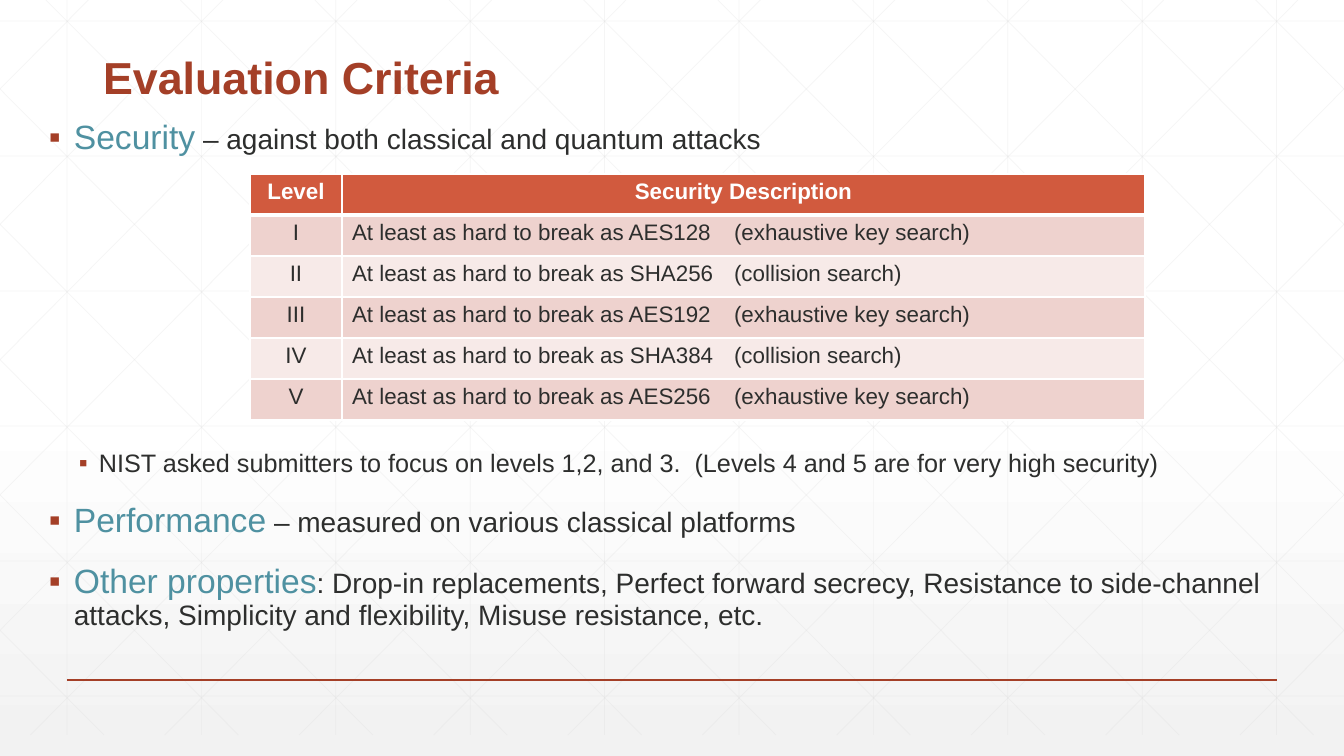
from dataclasses import dataclass

from lxml import etree
from pptx import Presentation
from pptx.dml.color import RGBColor
from pptx.enum.shapes import MSO_CONNECTOR
from pptx.enum.text import MSO_ANCHOR, MSO_AUTO_SIZE, PP_ALIGN
from pptx.oxml.ns import qn
from pptx.util import Emu, Pt

LINE = MSO_CONNECTOR.STRAIGHT
BOTTOM = MSO_ANCHOR.BOTTOM
FIXED = MSO_AUTO_SIZE.NONE
LEFT, CENTER = PP_ALIGN.LEFT, PP_ALIGN.CENTER

SCALE = 914400 / 100.8
WIDE, HIGH = 1344, 756


@dataclass(frozen=True)
class Theme:
    font: str = "Arial"
    rust: str = "A43F27"
    teal: str = "4F91A1"
    ink: str = "2D2E2D"
    white: str = "FFFFFF"
    haze: str = "F2F2F2"
    grid: str = "D9D9D9"
    head: str = "D15A3E"
    bands: tuple = ("EED2CE", "F7EAE8")
    title: int = 32
    key: int = 24
    body: int = 20
    sub: int = 18
    cell: int = 16


THEME = Theme()

LEVELS = [
    ("Level", "Security Description"),
    ("I", "At least as hard to break as AES128\t(exhaustive key search)"),
    ("II", "At least as hard to break as SHA256\t(collision search)"),
    ("III", "At least as hard to break as AES192\t(exhaustive key search)"),
    ("IV", "At least as hard to break as SHA384\t(collision search)"),
    ("V", "At least as hard to break as AES256\t(exhaustive key search)"),
]
SECURITY = [("Security", " – against both classical and quantum attacks")]
OTHERS = [
    ("", "NIST asked submitters to focus on levels 1,2, and 3.  "
         "(Levels 4 and 5 are for very high security)"),
    ("Performance", " – measured on various classical platforms"),
    ("Other properties", ": Drop-in replacements, Perfect forward secrecy, "
     "Resistance to side-channel attacks, Simplicity and flexibility, "
     "Misuse resistance, etc."),
]


def px(n):
    return Emu(round(n * SCALE))


def rgb(code):
    return RGBColor.from_string(code)


def node(parent, tag, **attrs):
    return etree.SubElement(parent, qn(tag), {k: str(v) for k, v in attrs.items()})


def style(font, size, color, bold=False):
    font.name = THEME.font
    font.size = Pt(size)
    font.bold = bold
    font.color.rgb = rgb(color)


def add_line(shapes, x1, y1, x2, y2, color, width, alpha=100):
    line = shapes.add_connector(LINE, px(x1), px(y1), px(x2), px(y2))
    line.line.color.rgb = rgb(color)
    line.line.width = Pt(width)
    props = line.element.spPr
    if alpha < 100:
        node(next(props.iter(qn("a:srgbClr"))), "a:alpha", val=alpha * 1000)
    node(props, "a:effectLst")


def add_grid(slide):
    """Draw the faint lattice: verticals, horizontals and mirrored diagonals."""
    shapes = slide.shapes.add_group_shape().shapes
    step, base, run = WIDE / 10, 735, 730
    slope = base / run

    def draw(*ends):
        add_line(shapes, *ends, THEME.grid, 0.5, alpha=25)

    for i in range(10):
        x = 67 + i * step
        draw(x, 0, x, base)
    for i in range(6):
        y = 21 + i * 135
        draw(0, y, WIDE, y)
    for i in range(-5, 10):
        start = 46 + i * step
        x1, x2 = max(start, 0), min(start + run, WIDE)
        y1, y2 = (x1 - start) * slope, (x2 - start) * slope
        draw(x1, y1, x2, y2)
        draw(WIDE - x1, y1, WIDE - x2, y2)


def set_back(slide):
    fill = slide.background.fill
    fill.gradient()
    fill.gradient_angle = 270
    for stop, spot, color in zip(fill.gradient_stops, (0.53, 1),
                                 (THEME.white, THEME.haze)):
        stop.position = spot
        stop.color.rgb = rgb(color)


def set_title(slide, text):
    title = slide.shapes.title
    slide.shapes.element.append(title.element)  # bring in front of the grid
    title.left, title.top, title.width, title.height = map(px, (93, 19, 1159, 90))
    frame = title.text_frame
    frame.text = text
    frame.auto_size = FIXED
    frame.vertical_anchor = BOTTOM
    para = frame.paragraphs[0]
    para.alignment = LEFT
    para.line_spacing = 0.9
    style(para.font, THEME.title, THEME.rust, True)


def add_points(slide, top, height, points):
    """Add bullets; a point without a key term is a sub-point."""
    box = slide.shapes.add_textbox(px(39), px(top), px(1265), px(height))
    frame = box.text_frame
    frame.word_wrap = True
    for i, (key, rest) in enumerate(points):
        para = frame.add_paragraph() if i else frame.paragraphs[0]
        para.line_spacing = 0.9
        para.space_before = Pt((18 if key else 12) if i else 0)
        props = para._p.get_or_add_pPr()
        margin, hang = (25, 25) if key else (50, 20)
        props.set("marL", str(px(margin)))
        props.set("indent", str(-px(hang)))
        node(node(props, "a:buClr"), "a:srgbClr", val=THEME.rust)
        node(props, "a:buFont", typeface=THEME.font)
        node(props, "a:buChar", char="▪")
        if key:
            for text, size, color in ((key, THEME.key, THEME.teal),
                                      (rest, THEME.body, THEME.ink)):
                run = para.add_run()
                run.text = text
                style(run.font, size, color)
        else:
            para.add_run().text = rest
            style(para.font, THEME.sub, THEME.ink)


def set_edges(cell, **widths):
    props = cell._tc.get_or_add_tcPr()
    for side in "LRTB":
        edge = node(props, f"a:ln{side}", w=Pt(widths.get(side, 1)))
        node(node(edge, "a:solidFill"), "a:srgbClr", val=THEME.white)


def add_levels(slide):
    cols, row = (92, 803), 41
    table = slide.shapes.add_table(len(LEVELS), len(cols), px(250), px(174),
                                   px(sum(cols)), px(row * len(LEVELS))).table
    table.horz_banding = False
    for i, width in enumerate(cols):
        table.columns[i].width = px(width)
    for r, texts in enumerate(LEVELS):
        table.rows[r].height = px(row)
        head = r == 0
        for c, text in enumerate(texts):
            cell = table.cell(r, c)
            set_edges(cell, B=3 if head else 1, T=3 if r == 1 else 1)
            cell.fill.solid()
            cell.fill.fore_color.rgb = rgb(THEME.head if head
                                           else THEME.bands[(r - 1) % 2])
            cell.text = text
            para = cell.text_frame.paragraphs[0]
            para.alignment = CENTER if head or c == 0 else LEFT
            if "\t" in text:
                tabs = node(para._p.get_or_add_pPr(), "a:tabLst")
                node(tabs, "a:tab", pos=px(382), algn="l")
            style(para.font, THEME.cell, THEME.white if head else THEME.ink, head)


def main():
    deck = Presentation()
    deck.slide_width, deck.slide_height = px(WIDE), px(HIGH)
    slide = deck.slides.add_slide(deck.slide_layouts.get_by_name("Title Only"))
    set_back(slide)
    add_grid(slide)
    add_line(slide.shapes, 67, 680, 1277, 680, THEME.rust, 1)
    set_title(slide, "Evaluation Criteria")
    add_points(slide, 116, 50, SECURITY)
    add_levels(slide)
    add_points(slide, 446, 200, OTHERS)
    deck.save("out.pptx")


if __name__ == "__main__":
    main()
